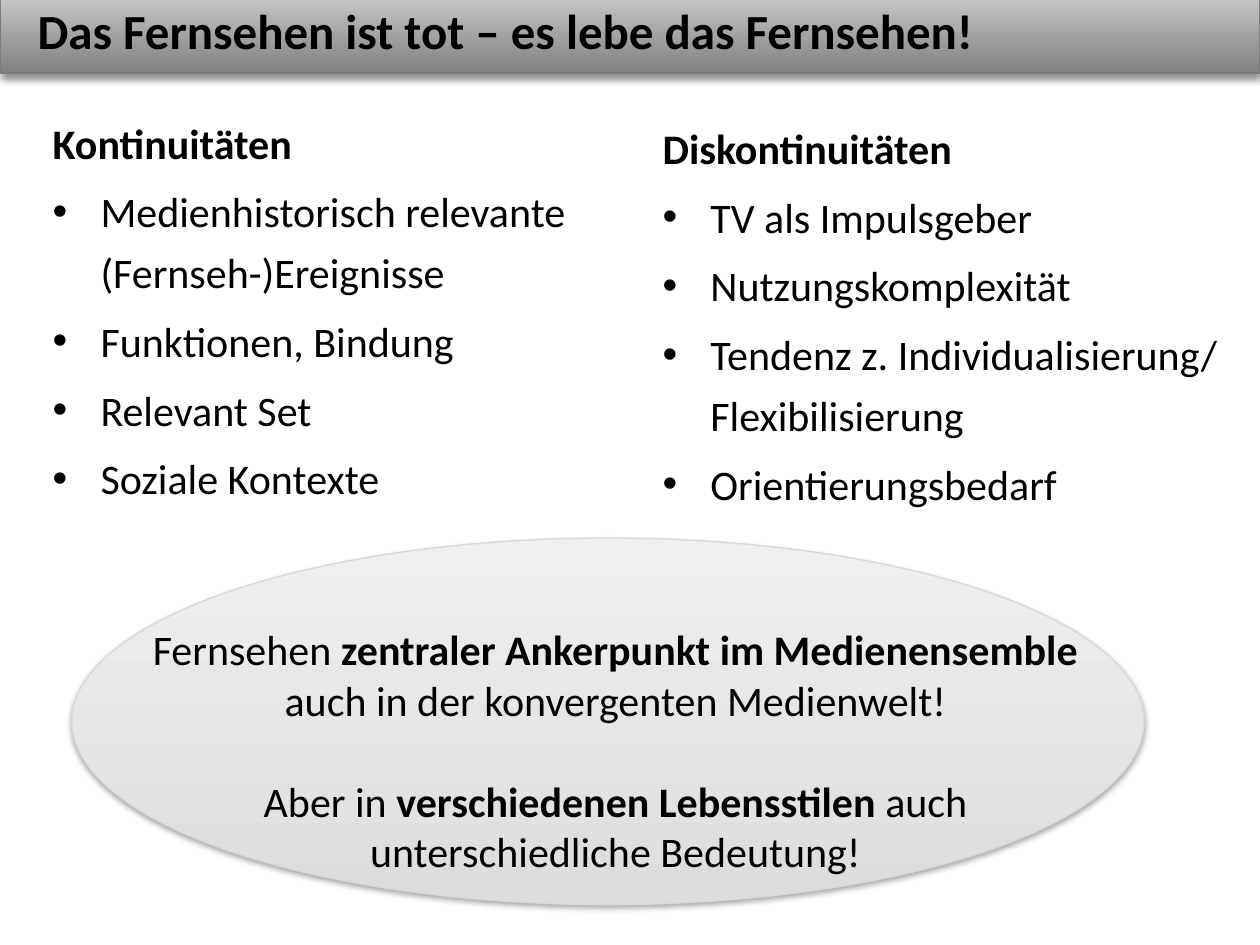
from lxml.etree import SubElement
from pptx import Presentation
from pptx.dml.color import RGBColor
from pptx.enum.shapes import MSO_SHAPE
from pptx.enum.text import MSO_ANCHOR, PP_ALIGN
from pptx.oxml.ns import qn
from pptx.util import Inches, Pt

# Content
TITLE = "Das Fernsehen ist tot – es lebe das Fernsehen!"
COLUMNS = [
    {"box": (0.32, 0.8, 4.57, 3.34), "heading": "Kontinuitäten",
     "points": ["Medienhistorisch relevante (Fernseh-)Ereignisse",
                "Funktionen, Bindung", "Relevant Set", "Soziale Kontexte"]},
    {"box": (5.16, 0.84, 4.68, 3.15), "heading": "Diskontinuitäten",
     "points": ["TV als Impulsgeber", "Nutzungskomplexität",
                "Tendenz z. Individualisierung/ Flexibilisierung",
                "Orientierungsbedarf"]},
]
# Each statement is a list of (text, bold)
STATEMENTS = [
    [("Fernsehen ", False), ("zentraler Ankerpunkt im Medienensemble ", True),
     ("auch in der konvergenten Medienwelt!", False)],
    [("Aber in ", False), ("verschiedenen Lebensstilen", True),
     (" auch unterschiedliche Bedeutung!", False)],
]

THEME = {
    "font": "Calibri", "text": "000000", "panel": "FFFFFF",
    "title_size": 28, "body_size": 24, "panel_opacity": 60,
    "bar": {"gradient": ("808080", "CDCDCD"), "line": "7D7D7D",
            "shadow": {"opacity": 43, "blur": 4, "distance": 3}},
    "ellipse": {"gradient": ("DDDDDD", "EFEFEF"), "line": "D8D8D8",
                "shadow": {"opacity": 35, "blur": 3.1, "distance": 1.8}},
}
INDENT = Inches(0.38)


def place(box):
    return [Inches(value) for value in box]


def style_font(font, size, bold=False):
    font.name = THEME["font"]
    font.size = Pt(size)
    font.bold = bold
    font.color.rgb = RGBColor.from_string(THEME["text"])


def add_shadow(shape, opacity, blur, distance):
    effects = SubElement(shape.element.spPr, qn("a:effectLst"))
    shadow = SubElement(effects, qn("a:outerShdw"), blurRad=str(Pt(blur)),
                        dist=str(Pt(distance)), dir="5400000", rotWithShape="0")
    color = SubElement(shadow, qn("a:srgbClr"), val="000000")
    SubElement(color, qn("a:alpha"), val=str(opacity * 1000))


def add_gradient_shape(slide, kind, box, style):
    shape = slide.shapes.add_shape(kind, *place(box))
    shape.fill.gradient()
    shape.fill.gradient_angle = 90
    for stop, color in zip(shape.fill.gradient_stops, style["gradient"]):
        stop.color.rgb = RGBColor.from_string(color)
    shape.line.color.rgb = RGBColor.from_string(style["line"])
    shape.line.width = Pt(0.75)
    add_shadow(shape, **style["shadow"])


def add_text_box(slide, box):
    shape = slide.shapes.add_textbox(*place(box))
    shape.text_frame.word_wrap = True
    return shape


def add_bullet(paragraph):
    properties = paragraph._p.get_or_add_pPr()
    properties.set("marL", str(INDENT))
    properties.set("indent", str(-INDENT))
    SubElement(properties, qn("a:buFont"), typeface="Arial")
    SubElement(properties, qn("a:buChar"), char="•")


def add_column(slide, box, heading, points):
    shape = add_text_box(slide, box)
    shape.fill.solid()
    shape.fill.fore_color.rgb = RGBColor.from_string(THEME["panel"])
    color = shape.element.spPr.find(".//" + qn("a:srgbClr"))
    SubElement(color, qn("a:alpha"), val=str(THEME["panel_opacity"] * 1000))
    frame = shape.text_frame
    frame.text = "\n".join([heading, *points])
    for index, paragraph in enumerate(frame.paragraphs):
        paragraph.line_spacing = 1.2
        if index:
            paragraph.space_before = Pt(THEME["body_size"] * 0.2)
            add_bullet(paragraph)
        style_font(paragraph.runs[0].font, THEME["body_size"], bold=index == 0)


def main():
    presentation = Presentation()
    presentation.slide_width, presentation.slide_height = Inches(10), Inches(7.5)
    slide = presentation.slides.add_slide(presentation.slide_layouts[6])

    # Title bar and conclusion ellipse
    add_gradient_shape(slide, MSO_SHAPE.RECTANGLE, (0, -0.08, 10, 0.66), THEME["bar"])
    add_gradient_shape(slide, MSO_SHAPE.OVAL, (0.57, 4.27, 8.51, 2.91), THEME["ellipse"])

    # Title
    frame = add_text_box(slide, (0.2, 0, 9.65, 0.47)).text_frame
    frame.vertical_anchor = MSO_ANCHOR.MIDDLE
    frame.text = TITLE
    style_font(frame.paragraphs[0].runs[0].font, THEME["title_size"], bold=True)

    # Two columns
    for column in COLUMNS:
        add_column(slide, **column)

    # Conclusion, with one line of space between the statements
    frame = add_text_box(slide, (0.91, 4.9, 7.95, 2.12)).text_frame
    for index, statement in enumerate(STATEMENTS):
        paragraph = frame.add_paragraph() if index else frame.paragraphs[0]
        paragraph.alignment = PP_ALIGN.CENTER
        if index:
            paragraph.space_before = Pt(29)
        for text, bold in statement:
            run = paragraph.add_run()
            run.text = text
            style_font(run.font, THEME["body_size"], bold)

    presentation.save("out.pptx")


if __name__ == "__main__":
    main()
